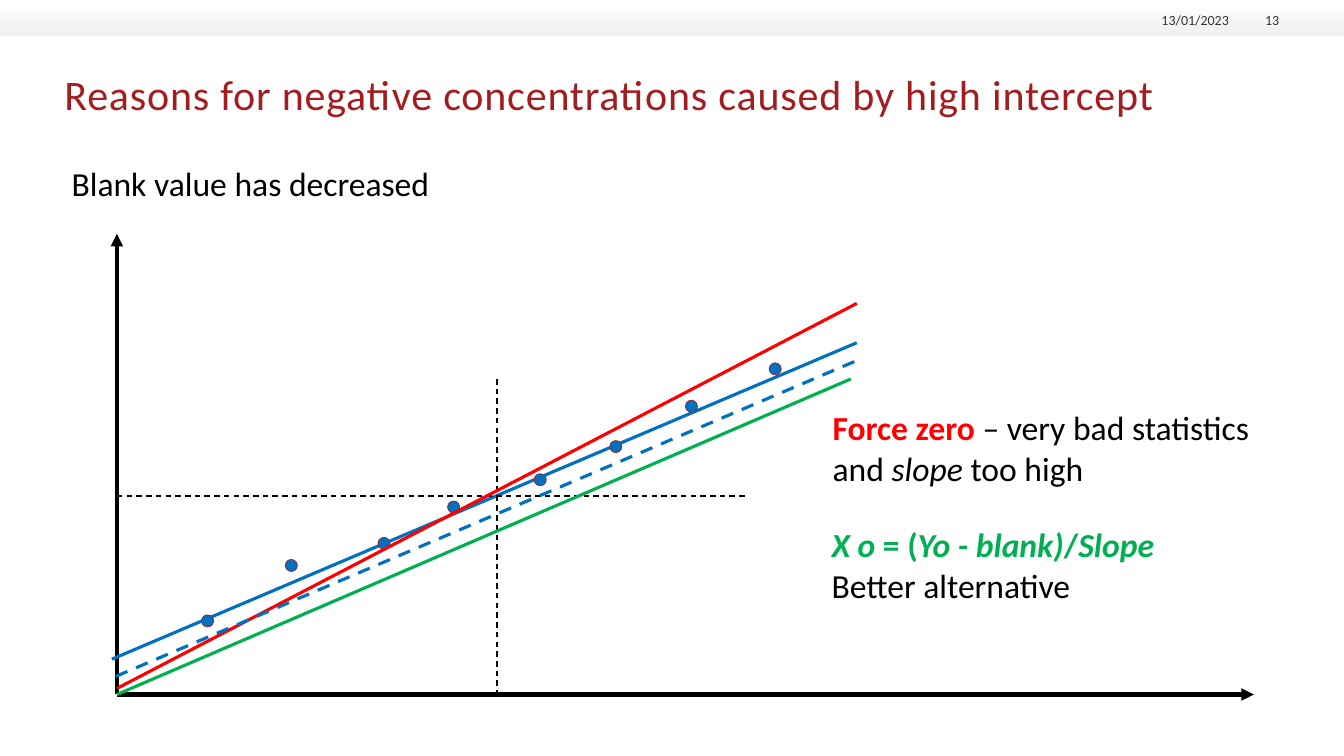
from dataclasses import dataclass

from lxml import etree
from pptx import Presentation
from pptx.dml.color import RGBColor
from pptx.enum.dml import MSO_LINE
from pptx.enum.shapes import MSO_CONNECTOR, MSO_SHAPE
from pptx.enum.text import MSO_ANCHOR, PP_ALIGN
from pptx.oxml.ns import qn
from pptx.slide import Slide
from pptx.util import Pt

STRAIGHT = MSO_CONNECTOR.STRAIGHT
RECTANGLE, OVAL = MSO_SHAPE.RECTANGLE, MSO_SHAPE.OVAL
DASH = MSO_LINE.DASH
TOP, BOTTOM = MSO_ANCHOR.TOP, MSO_ANCHOR.BOTTOM
LEFT, RIGHT = PP_ALIGN.LEFT, PP_ALIGN.RIGHT


@dataclass(frozen=True)
class Theme:
    font: str = "Calibri"
    title_size: float = 30
    body_size: float = 24
    small_size: float = 10
    black: str = "000000"
    grey: str = "333333"
    dark_red: str = "A31D20"
    red: str = "FF0000"
    green: str = "00B050"
    blue: str = "0070C0"
    band_top: str = "FFFFFF"
    band_bottom: str = "EFF0EF"


THEME = Theme()


@dataclass(frozen=True)
class Line:
    start: tuple[float, float]
    end: tuple[float, float]
    color: str
    width: float
    dashed: bool = False
    arrow: bool = False


@dataclass(frozen=True)
class Run:
    text: str
    color: str = THEME.black
    bold: bool = False
    italic: bool = False


@dataclass(frozen=True)
class TextBlock:
    box: tuple[float, float, float, float]
    paragraphs: list[list[Run]]
    size: float = THEME.body_size
    align: PP_ALIGN = LEFT
    anchor: MSO_ANCHOR = TOP
    wrap: bool = False
    spacing: float = 0


# Chart geometry in points
ORIGIN_X, ORIGIN_Y = 83.52, 496.08
DOT_SIZE = 8.64
DOT_CENTERS = [
    (148.3, 443.5), (208.1, 403.9), (274.3, 388.1), (324, 362.2),
    (385.9, 342.7), (439.9, 319), (493.9, 290.2), (553.7, 263.5),
]
AXES = [
    Line((ORIGIN_X, ORIGIN_Y), (ORIGIN_X, 167.04), THEME.black, 3, arrow=True),
    Line((ORIGIN_X, ORIGIN_Y), (895.68, ORIGIN_Y), THEME.black, 3, arrow=True),
]
REGRESSION = Line((79.92, 470.88), (612, 244.8), THEME.blue, 2.25)
GUIDES = [
    Line((ORIGIN_X, 354.24), (532.8, 354.24), THEME.black, 1, dashed=True),
    Line((354.96, 270.72), (354.96, 497.52), THEME.black, 1, dashed=True),
]
ALTERNATIVES = [
    Line((ORIGIN_X, 491.76), (612, 216.72), THEME.red, 2.25),
    Line((ORIGIN_X, ORIGIN_Y), (607.68, 270.72), THEME.green, 2.25),
    Line((82.8, 483.12), (614.88, 256.32), THEME.blue, 2.25, dashed=True),
]

TEXT_BLOCKS = [
    # Title, date and slide number
    TextBlock((46.08, 48.96, 866.88, 68.4),
              [[Run("Reasons for negative concentrations caused by high intercept",
                    THEME.dark_red)]],
              THEME.title_size, wrap=True, spacing=0.6),
    TextBlock((813.6, 6.48, 64.08, 13.68), [[Run("13/01/2023", THEME.grey)]],
              THEME.small_size, RIGHT, BOTTOM, wrap=True),
    TextBlock((883.44, 6.48, 30.24, 13.68), [[Run("13", THEME.grey)]],
              THEME.small_size, RIGHT, BOTTOM, wrap=True),
    # Subtitle and explanations
    TextBlock((51.12, 116.64, 279.36, 28.8), [[Run("Blank value has decreased")]]),
    TextBlock((594.72, 290.88, 337.68, 58.32), [
        [Run("Force zero ", THEME.red, bold=True), Run("– very bad statistics")],
        [Run("and "), Run("slope", italic=True), Run(" too high")],
    ]),
    TextBlock((594, 374.4, 282.96, 58.32), [
        [Run("X o", THEME.green, True, True), Run(" = (", THEME.green, True),
         Run("Yo - blank)", THEME.green, True, True), Run("/", THEME.green, True),
         Run("Slope", THEME.green, True, True)],
        [Run("Better alternative")],
    ]),
]


def rgb(color: str) -> RGBColor:
    return RGBColor.from_string(color)


def draw_header_band(slide: Slide, width: float) -> None:
    band = slide.shapes.add_shape(RECTANGLE, Pt(0), Pt(0), Pt(width), Pt(26))
    band.shadow.inherit = False
    band.line.fill.background()
    band.fill.gradient()
    band.fill.gradient_angle = 270
    for stop, color in zip(band.fill.gradient_stops, (THEME.band_top, THEME.band_bottom)):
        stop.color.rgb = rgb(color)


def draw_line(slide: Slide, line: Line) -> None:
    connector = slide.shapes.add_connector(
        STRAIGHT, *(Pt(value) for value in line.start + line.end))
    connector.line.color.rgb = rgb(line.color)
    connector.line.width = Pt(line.width)
    if line.dashed:
        connector.line.dash_style = DASH
    properties = connector.element.spPr
    if line.arrow:
        etree.SubElement(properties.find(qn("a:ln")), qn("a:tailEnd"), type="triangle")
    etree.SubElement(properties, qn("a:effectLst"))


def draw_dot(slide: Slide, center: tuple[float, float]) -> None:
    left, top = (value - DOT_SIZE / 2 for value in center)
    dot = slide.shapes.add_shape(OVAL, Pt(left), Pt(top), Pt(DOT_SIZE), Pt(DOT_SIZE))
    dot.shadow.inherit = False
    dot.fill.solid()
    dot.fill.fore_color.rgb = rgb(THEME.blue)
    dot.line.color.rgb = rgb(THEME.dark_red)
    dot.line.width = Pt(0.5)


def draw_text(slide: Slide, block: TextBlock) -> None:
    frame = slide.shapes.add_textbox(*(Pt(value) for value in block.box)).text_frame
    frame.margin_left = frame.margin_top = frame.margin_right = frame.margin_bottom = 0
    frame.word_wrap = block.wrap
    frame.vertical_anchor = block.anchor
    for index, runs in enumerate(block.paragraphs):
        paragraph = frame.add_paragraph() if index else frame.paragraphs[0]
        paragraph.alignment = block.align
        for item in runs:
            run = paragraph.add_run()
            run.text = item.text
            run.font.name = THEME.font
            run.font.size = Pt(block.size)
            run.font.bold = item.bold
            run.font.italic = item.italic
            run.font.color.rgb = rgb(item.color)
            if block.spacing:
                run.font._element.set("spc", str(round(block.spacing * 100)))


def main() -> None:
    presentation = Presentation()
    presentation.slide_width, presentation.slide_height = Pt(960), Pt(540)
    slide = presentation.slides.add_slide(presentation.slide_layouts[6])
    draw_header_band(slide, 960)
    # Axes and fitted line lie below the measured points
    for line in [*AXES, REGRESSION]:
        draw_line(slide, line)
    for center in DOT_CENTERS:
        draw_dot(slide, center)
    # Guides and alternative lines lie above them
    for line in GUIDES + ALTERNATIVES:
        draw_line(slide, line)
    for block in TEXT_BLOCKS:
        draw_text(slide, block)
    presentation.save("out.pptx")


if __name__ == "__main__":
    main()
